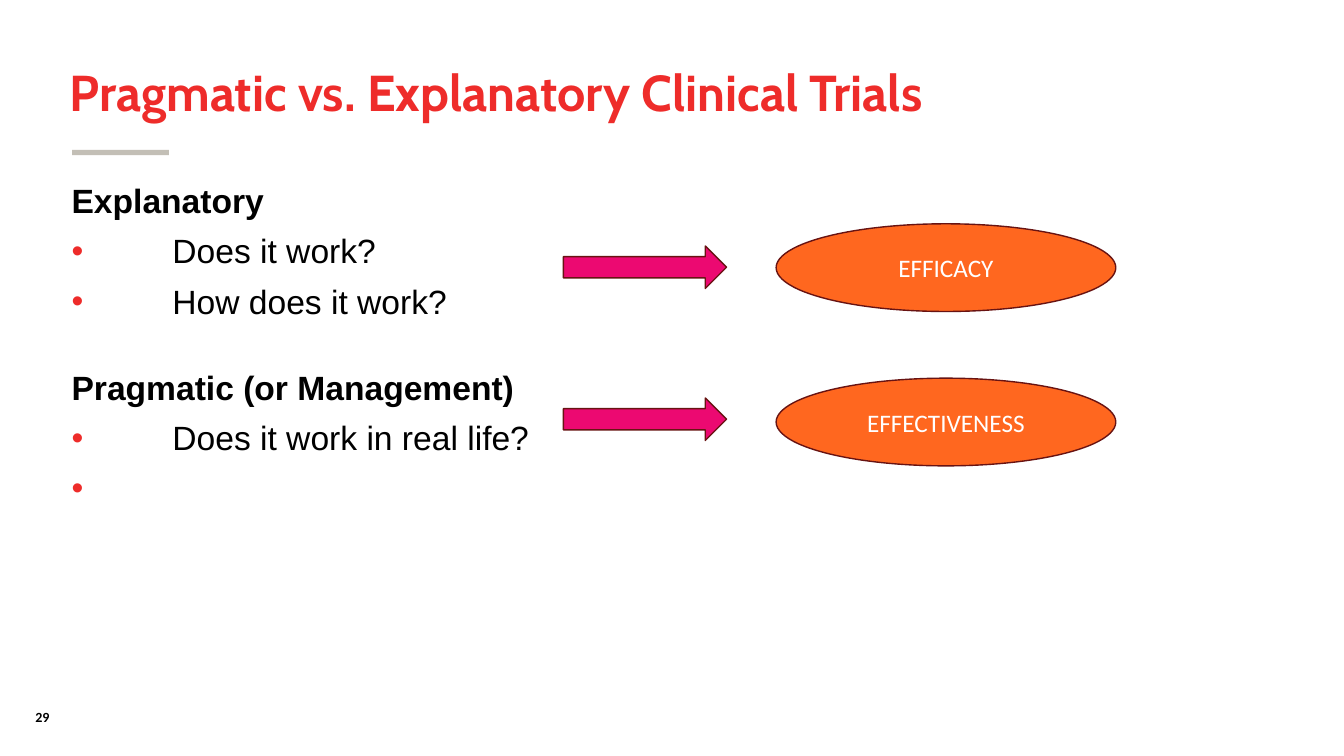
from lxml import etree
from pptx import Presentation
from pptx.dml.color import RGBColor
from pptx.enum.shapes import MSO_SHAPE
from pptx.enum.text import MSO_ANCHOR, MSO_AUTO_SIZE, PP_ALIGN
from pptx.oxml.ns import qn
from pptx.util import Cm, Pt

RECT, OVAL, ARROW = MSO_SHAPE.RECTANGLE, MSO_SHAPE.OVAL, MSO_SHAPE.RIGHT_ARROW
TOP, MIDDLE = MSO_ANCHOR.TOP, MSO_ANCHOR.MIDDLE
LEFT, CENTER = PP_ALIGN.LEFT, PP_ALIGN.CENTER
NO_FIT = MSO_AUTO_SIZE.NONE


def rgb(color):
    return RGBColor.from_string(color)


class SlideBuilder:
    RED, GREY, ORANGE, PINK, EDGE = "EE2C2A", "C3BFB6", "FF671F", "EC0971", "681312"
    TITLE = {"name": "Cabin", "size": Pt(36), "bold": True, "color": RED}
    HEADING = {"name": "Arial", "size": Pt(24), "bold": True, "color": "000000"}
    ITEM = {**HEADING, "bold": False}
    LABEL = {"name": "Calibri", "size": Pt(18), "bold": False, "color": "FFFFFF"}
    NUMBER = {"name": "Calibri", "size": Pt(10), "bold": True, "color": "000000"}

    def __init__(self, prs):
        self.slide = prs.slides.add_slide(prs.slide_layouts[1])

    def add_text(self, p, text, style, align=LEFT):
        p.alignment = align
        r = p.add_run()
        r.text = text
        for key, value in style.items():
            if key == "color":
                r.font.color.rgb = rgb(value)
            else:
                setattr(r.font, key, value)

    def place(self, sp, box, anchor):
        """Move a shape to box (cm) and fix how its text frame behaves."""
        sp.left, sp.top, sp.width, sp.height = map(Cm, box)
        tf = sp.text_frame
        for key, value in {"word_wrap": True, "auto_size": NO_FIT,
                           "vertical_anchor": anchor}.items():
            setattr(tf, key, value)
        return tf

    def title(self, text, box):
        tf = self.place(self.slide.shapes.title, box, MIDDLE)
        p = tf.paragraphs[0]
        p.line_spacing = 0.9
        self.add_text(p, text, self.TITLE)

    def bullet(self, p, shown):
        """Give p a hanging red bullet, or no bullet and no indent."""
        pPr = p._p.get_or_add_pPr()
        indent = Cm(2.54) if shown else 0
        pPr.set("marL", str(indent))
        pPr.set("indent", str(-indent))
        if not shown:
            etree.SubElement(pPr, qn("a:buNone"))
            return
        color = etree.SubElement(pPr, qn("a:buClr"))
        etree.SubElement(color, qn("a:srgbClr"), val=self.RED)
        etree.SubElement(pPr, qn("a:buFont"), typeface="Arial")
        etree.SubElement(pPr, qn("a:buChar"), char="•")

    def body(self, groups, box):
        tf = self.place(self.slide.placeholders[1], box, TOP)
        p = tf.paragraphs[0]
        for i, (heading, items) in enumerate(groups):
            for j, text in enumerate([heading, *items]):
                if i or j:
                    p = tf.add_paragraph()
                self.bullet(p, j > 0)
                p.line_spacing = 0.9
                p.space_before = Pt(10 if j else 36 if i else 0)
                self.add_text(p, text, self.ITEM if j else self.HEADING)

    def shape(self, kind, box, fill, line=None, text=None):
        sp = self.slide.shapes.add_shape(kind, *map(Cm, box))
        sp.shadow.inherit = False
        sp.fill.solid()
        sp.fill.fore_color.rgb = rgb(fill)
        if line:
            sp.line.color.rgb = rgb(line)
            sp.line.width = Pt(1)
        else:
            sp.line.fill.background()
        if text:
            tf = self.place(sp, box, MIDDLE)
            self.add_text(tf.paragraphs[0], text, self.LABEL, CENTER)

    def number(self, text, box):
        sp = self.slide.shapes.add_textbox(*map(Cm, box))
        tf = self.place(sp, box, TOP)
        self.add_text(tf.paragraphs[0], text, self.NUMBER)


def main():
    prs = Presentation()
    prs.slide_width, prs.slide_height = Cm(33.87), Cm(19.05)
    s = SlideBuilder(prs)
    s.number("29", (0.64, 17.73, 2.9, 0.69))
    s.shape(RECT, (1.82, 3.78, 2.44, 0.13), s.GREY)
    s.title("Pragmatic vs. Explanatory Clinical Trials", (1.5, 1.02, 28.55, 2.74))
    s.body([
        ("Explanatory", ["Does it work?", "How does it work?"]),
        # The tab keeps the last, unfilled bullet showing
        ("Pragmatic (or Management)", ["Does it work in real life?", "\t"]),
    ], (1.55, 4.52, 28.5, 12.09))
    for outcome, oval_top, arrow_top in (("EFFICACY", 5.64, 6.2),
                                         ("EFFECTIVENESS", 9.53, 10.03)):
        s.shape(OVAL, (19.56, oval_top, 8.56, 2.21), s.ORANGE, s.EDGE, outcome)
        s.shape(ARROW, (14.2, arrow_top, 4.11, 1.07), s.PINK, s.EDGE)
    prs.save("out.pptx")


if __name__ == "__main__":
    main()
